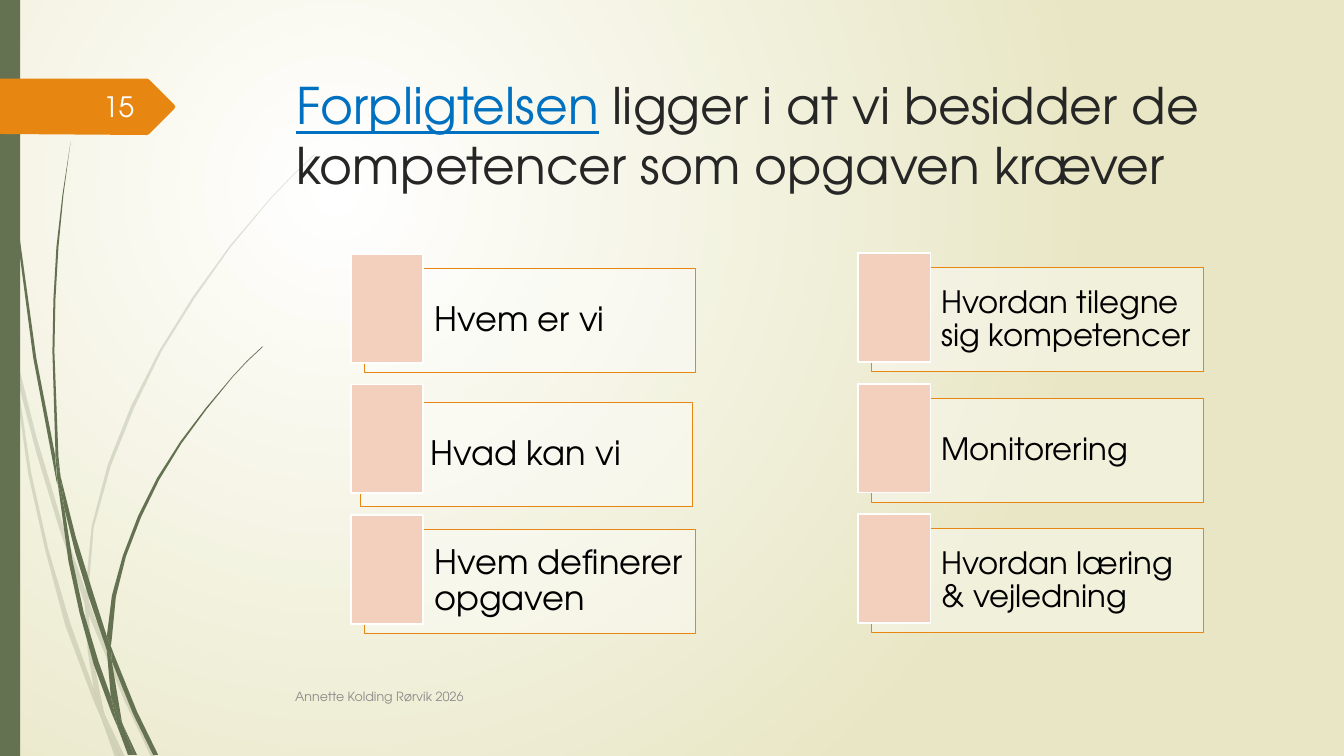
from lxml.etree import SubElement
from pptx import Presentation
from pptx.dml.color import RGBColor
from pptx.enum.shapes import MSO_SHAPE
from pptx.enum.text import MSO_ANCHOR, PP_ALIGN
from pptx.oxml import parse_xml
from pptx.oxml.ns import nsdecls, qn
from pptx.util import Cm, Pt

WHITE = RGBColor(0xFF, 0xFF, 0xFF)
CREAM = RGBColor(0xE8, 0xE6, 0xC4)
MOSS = RGBColor(0x64, 0x72, 0x52)
ORANGE = RGBColor(0xE7, 0x87, 0x12)
PEACH = RGBColor(0xF3, 0xCF, 0xBD)
BLUE = RGBColor(0x00, 0x70, 0xC0)
INK = RGBColor(0x26, 0x26, 0x26)
BLACK = RGBColor(0x00, 0x00, 0x00)
GRAY = RGBColor(0x8C, 0x8C, 0x8C)
NUMBER_WHITE = RGBColor(0xFE, 0xFF, 0xFF)

# Outline points are in hundredths of an inch.
OUTLINE_UNIT = Cm(2.54) / 100

PALE_GRASS = [
    [(11, 350), (9, 322), (0, 282), (0, 299), (10, 344)],
    [(58, 522), (84, 599), (85, 586), (62, 520), (36, 433), (14, 345), (17, 376), (36, 449)],
    [(92, 607), (88, 596), (88, 610), (123, 694), (150, 751), (155, 751), (127, 692)],
    [(119, 751), (124, 751), (105, 711)],
    [(93, 683), (70, 619), (48, 545), (31, 469), (17, 376), (11, 350), (28, 470),
     (45, 546), (65, 621), (92, 693), (101, 714), (99, 707)],
    [(84, 599), (87, 646), (93, 683), (96, 692), (105, 711), (103, 706), (91, 646),
     (88, 610), (88, 608)],
    [(88, 584), (93, 523), (110, 462), (133, 405), (160, 349), (193, 296), (229, 245),
     (268, 198), (290, 175), (312, 154), (312, 153), (289, 175), (268, 197), (228, 244),
     (191, 295), (158, 348), (130, 403), (107, 461), (91, 522), (85, 584), (85, 586),
     (88, 596)],
    [(101, 714), (114, 751), (119, 751)],
    [(88, 608), (88, 610), (88, 596), (85, 586), (84, 599)],
    [(96, 692), (93, 683), (99, 707), (101, 714), (119, 751), (105, 711)],
]

DARK_GRASS = [
    [(7, 110), (17, 233), (33, 355), (56, 477), (57, 481), (55, 457), (55, 453), (36, 355),
     (19, 232), (8, 109), (5, 48), (4, 0), (3, 0), (4, 48)],
    [(88, 592), (106, 645), (106, 633), (106, 631), (93, 590), (75, 532), (60, 472),
     (64, 505), (75, 549)],
    [(113, 649), (110, 641), (111, 656), (132, 708), (152, 749), (157, 749), (136, 706)],
    [(110, 691), (98, 657), (83, 607), (72, 556), (64, 505), (57, 477), (68, 557),
     (79, 608), (93, 659), (111, 708), (117, 722), (116, 717)],
    [(60, 472), (58, 453), (54, 349), (55, 297), (58, 245), (63, 193), (70, 141),
     (62, 193), (56, 245), (53, 297), (52, 349), (55, 449)],
    [(133, 749), (136, 749), (122, 719)],
    [(57, 477), (64, 505), (60, 472), (55, 449), (55, 453)],
    [(111, 633), (115, 592), (125, 552), (140, 513), (158, 476), (180, 440), (205, 406),
     (231, 374), (245, 359), (261, 344), (260, 344), (245, 358), (231, 373), (204, 405),
     (179, 438), (156, 474), (137, 512), (122, 551), (111, 591), (106, 631), (110, 641)],
    [(117, 722), (127, 749), (131, 749)],
    [(106, 645), (110, 691), (116, 706), (122, 719), (121, 716), (111, 656), (109, 651)],
    [(106, 645), (109, 651), (111, 656), (110, 641), (106, 631), (106, 633)],
    [(116, 706), (110, 691), (116, 717), (117, 722), (130, 749), (133, 749), (122, 719)],
]

NUMBER_ARROW = [(0, 78), (146, 78), (148, 79), (173, 104), (174, 106), (173, 108),
                (148, 133), (146, 134), (0, 133)]

# Each column: left and top of its first marker, text size, card texts.
COLUMNS = [
    (8.84, 6.4, 24, ["Hvem er vi", "Hvad kan vi", "Hvem definerer opgaven"]),
    (21.62, 6.38, 22, ["Hvordan tilegne sig kompetencer", "Monitorering",
                       "Hvordan læring & vejledning"]),
]
ROW_STEP = 3.29
CARD_OFFSET = (0.34, 0.37)
SHIFTED_CARDS = {"Hvad kan vi": (0.25, 0.46)}


class SlideBuilder:
    def __init__(self, slide, font_name):
        self.slide = slide
        self.font_name = font_name

    def background(self, inner, outer):
        """Radial gradient centred a quarter of the way into the slide."""
        self.slide.element.cSld.insert(0, parse_xml(
            f'<p:bg {nsdecls("p", "a")}><p:bgPr><a:gradFill rotWithShape="1"><a:gsLst>'
            f'<a:gs pos="0"><a:srgbClr val="{inner}"/></a:gs>'
            f'<a:gs pos="100000"><a:srgbClr val="{outer}"/></a:gs></a:gsLst>'
            '<a:path path="circle"><a:fillToRect l="50000" t="50000" r="100000" b="100000"/>'
            '</a:path></a:gradFill><a:effectLst/></p:bgPr></p:bg>'))

    def paint(self, shape, color, opacity=100, line=None, line_width=0.75):
        shape.shadow.inherit = False
        shape.fill.solid()
        shape.fill.fore_color.rgb = color
        if opacity < 100:
            color_element = shape.element.spPr.find(qn("a:solidFill"))[0]
            SubElement(color_element, qn("a:alpha")).set("val", str(opacity * 1000))
        if line is None:
            shape.line.fill.background()
        else:
            shape.line.color.rgb = line
            shape.line.width = Pt(line_width)

    def outline(self, shapes, points, color, opacity=100):
        builder = shapes.build_freeform(*points[0], scale=OUTLINE_UNIT)
        builder.add_line_segments(points[1:], close=True)
        self.paint(builder.convert_to_shape(), color, opacity)

    def grass(self, blades, opacity=100):
        group = self.slide.shapes.add_group_shape()
        for blade in blades:
            self.outline(group.shapes, blade, MOSS, opacity)

    def rectangle(self, left, top, width, height, color, **style):
        shape = self.slide.shapes.add_shape(
            MSO_SHAPE.RECTANGLE, Cm(left), Cm(top), Cm(width), Cm(height))
        self.paint(shape, color, **style)
        return shape

    def run(self, paragraph, text, size, color, underline=None):
        run = paragraph.add_run()
        run.text = text
        run.font.name = self.font_name
        run.font.size = Pt(size)
        run.font.color.rgb = color
        run.font.underline = underline

    def title(self, left, top, width, height, size, runs):
        title = self.slide.shapes.title
        title.left, title.top = Cm(left), Cm(top)
        title.width, title.height = Cm(width), Cm(height)
        # Keeps the title in front of the grass.
        title.element.getparent().append(title.element)
        title.text_frame.vertical_anchor = MSO_ANCHOR.TOP
        title.text_frame.word_wrap = True
        paragraph = title.text_frame.paragraphs[0]
        paragraph.alignment = PP_ALIGN.LEFT
        for text, color, underline in runs:
            self.run(paragraph, text, size, color, underline)

    def label(self, left, top, width, height, text, size, color, alignment=PP_ALIGN.LEFT):
        box = self.slide.shapes.add_textbox(Cm(left), Cm(top), Cm(width), Cm(height))
        box.text_frame.word_wrap = True
        box.text_frame.vertical_anchor = MSO_ANCHOR.MIDDLE
        paragraph = box.text_frame.paragraphs[0]
        paragraph.alignment = alignment
        self.run(paragraph, text, size, color)

    def card(self, left, top, text, size):
        """Outlined text card with a marker over its upper left corner."""
        offset_x, offset_y = SHIFTED_CARDS.get(text, CARD_OFFSET)
        card = self.rectangle(left + offset_x, top + offset_y, 8.36, 2.62, WHITE,
                              opacity=40, line=ORANGE)
        frame = card.text_frame
        frame.word_wrap = True
        frame.vertical_anchor = MSO_ANCHOR.MIDDLE
        frame.margin_left = Cm(1.77)
        frame.margin_right = frame.margin_top = frame.margin_bottom = Cm(0.23)
        paragraph = frame.paragraphs[0]
        paragraph.alignment = PP_ALIGN.LEFT
        paragraph.line_spacing = 0.9
        self.run(paragraph, text, size, BLACK)
        self.rectangle(left, top, 1.83, 2.74, PEACH, line=WHITE, line_width=1.25)


def main():
    presentation = Presentation()
    presentation.slide_width, presentation.slide_height = Cm(33.87), Cm(19.05)
    slide = presentation.slides.add_slide(presentation.slide_layouts[5])
    builder = SlideBuilder(slide, "TeX Gyre Adventor")

    builder.background(WHITE, CREAM)
    builder.grass(PALE_GRASS, opacity=20)
    builder.grass(DARK_GRASS)
    builder.rectangle(0, 0, 0.51, 19.05, MOSS)
    builder.outline(slide.shapes, NUMBER_ARROW, ORANGE)
    builder.title(7.21, 1.73, 24.77, 3.56, 36, [
        ("Forpligtelsen", BLUE, True),
        (" ligger i at vi besidder de kompetencer som opgaven kræver", INK, False)])
    for left, top, size, texts in COLUMNS:
        for row, text in enumerate(texts):
            builder.card(left, top + row * ROW_STEP, text, size)
    builder.label(7.19, 17.04, 21.16, 1.02, "Annette Kolding Rørvik 2026", 9, GRAY)
    builder.label(1.47, 2.18, 2.16, 1.02, "15", 20, NUMBER_WHITE, PP_ALIGN.RIGHT)

    presentation.save("out.pptx")


if __name__ == "__main__":
    main()
